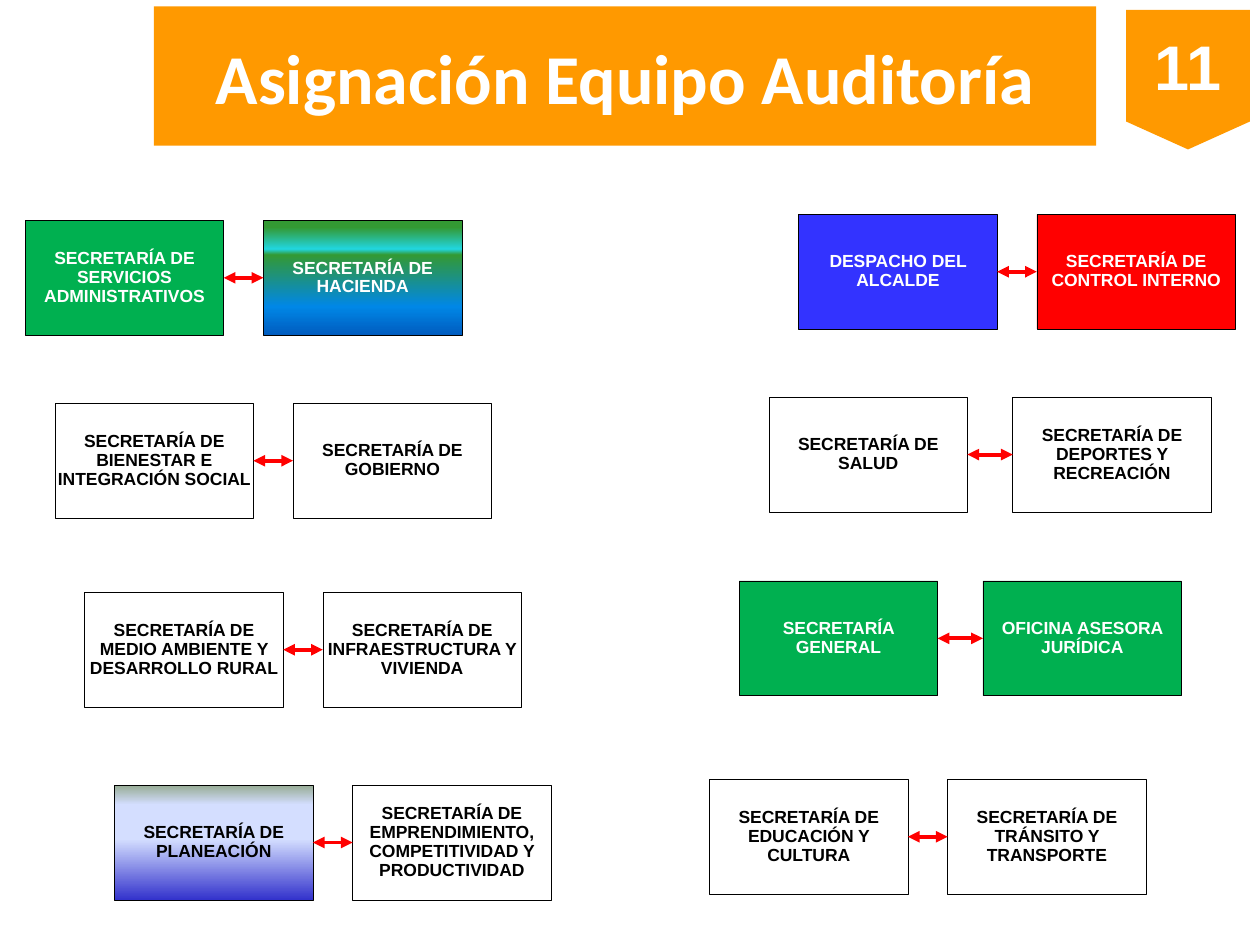
"""Build the audit team assignment slide with its paired departments."""
import pptx
import pptx.dml.color
import pptx.enum.dml
import pptx.enum.shapes
import pptx.enum.text
import pptx.oxml
import pptx.oxml.ns
import pptx.util

Pt = pptx.util.Pt
RGBColor = pptx.dml.color.RGBColor
SHAPES = pptx.enum.shapes.MSO_SHAPE
qn = pptx.oxml.ns.qn

WHITE = RGBColor(0xFF, 0xFF, 0xFF)
BLACK = RGBColor(0x00, 0x00, 0x00)
ORANGE = RGBColor(0xFF, 0x99, 0x00)
GREEN = RGBColor(0x00, 0xB0, 0x50)
BLUE = RGBColor(0x33, 0x33, 0xFF)
RED = RGBColor(0xFF, 0x00, 0x00)
FOREST = RGBColor(0x33, 0x99, 0x33)
INDIGO = RGBColor(0x33, 0x33, 0xCC)
PALE_BLUE = RGBColor(0xD4, 0xDE, 0xFF)
SAGE = RGBColor(0x96, 0xAB, 0x94)
CYAN = RGBColor(0x21, 0xD6, 0xE0)
AZURE = RGBColor(0x00, 0x87, 0xE6)
COBALT = RGBColor(0x00, 0x5C, 0xBF)

PLANNING = (90, [(0, INDIGO), (53, PALE_BLUE), (83, PALE_BLUE), (100, SAGE)])
TREASURY = (270, [(6, FOREST), (25, CYAN), (30, FOREST), (75, AZURE), (100, COBALT)])

BOX_WIDTH, BOX_HEIGHT = 113.4, 65.5
LEFT_START, RIGHT_START, STEP = 14.4, 456.4, 17

LEFT_PAIRS = [
    (126, 136.1, ("SECRETARÍA DE SERVICIOS ADMINISTRATIVOS", GREEN, WHITE),
     ("SECRETARÍA DE HACIENDA", TREASURY, WHITE)),
    (230.5, 136.1, ("SECRETARÍA DE BIENESTAR E INTEGRACIÓN SOCIAL", None, BLACK),
     ("SECRETARÍA DE GOBIERNO", None, BLACK)),
    (338.5, 136.1, ("SECRETARÍA DE MEDIO AMBIENTE Y DESARROLLO RURAL", None, BLACK),
     ("SECRETARÍA DE INFRAESTRUCTURA Y VIVIENDA", None, BLACK)),
    (448.7, 136.1, ("SECRETARÍA DE PLANEACIÓN", PLANNING, BLACK),
     ("SECRETARÍA DE EMPRENDIMIENTO, COMPETITIVIDAD Y PRODUCTIVIDAD", None, BLACK)),
]
RIGHT_PAIRS = [
    (122.5, 136.1, ("DESPACHO DEL ALCALDE", BLUE, WHITE),
     ("SECRETARÍA DE CONTROL INTERNO", RED, WHITE)),
    (227, 139.3, ("SECRETARÍA DE SALUD", None, BLACK),
     ("SECRETARÍA DE DEPORTES Y RECREACIÓN", None, BLACK)),
    (332, 139.3, ("SECRETARÍA GENERAL", GREEN, WHITE),
     ("OFICINA ASESORA JURÍDICA", GREEN, WHITE)),
    (445.4, 136.1, ("SECRETARÍA DE EDUCACIÓN Y CULTURA", None, BLACK),
     ("SECRETARÍA DE TRÁNSITO Y TRANSPORTE", None, BLACK)),
]


def add_label(kind, bounds, fill, text, font, size, color):
    shape = page.shapes.add_shape(kind, *[Pt(value) for value in bounds])
    shape.shadow.inherit = False
    shape.line.fill.background()
    if fill is None:
        shape.fill.background()
    elif isinstance(fill, RGBColor):
        shape.fill.solid()
        shape.fill.fore_color.rgb = fill
    else:
        angle, stops = fill
        shape.fill.gradient()
        shape.fill.gradient_angle = angle
        stop_list = shape._element.spPr.find(qn("a:gradFill")).find(qn("a:gsLst"))
        for old_stop in list(stop_list):
            stop_list.remove(old_stop)
        for position, stop_color in stops:
            stop_list.append(pptx.oxml.parse_xml(
                f'<a:gs {pptx.oxml.ns.nsdecls("a")} pos="{position * 1000}">'
                f'<a:srgbClr val="{stop_color}"/></a:gs>'))
    frame = shape.text_frame
    frame.word_wrap = True
    frame.vertical_anchor = pptx.enum.text.MSO_ANCHOR.MIDDLE
    para = frame.paragraphs[0]
    para.alignment = pptx.enum.text.PP_ALIGN.CENTER
    span = para.add_run()
    span.text = text
    span.font.name = font
    span.font.size = Pt(size)
    span.font.bold = True
    span.font.color.rgb = color
    return shape


def add_department(left, top, text, fill, color):
    box = add_label(SHAPES.RECTANGLE, (left, top, BOX_WIDTH, BOX_HEIGHT),
                    fill, text, "Arial", 10, color)
    box.line.color.rgb = BLACK
    box.line.width = Pt(0.25)
    frame = box.text_frame
    frame.margin_left = frame.margin_right = frame.margin_top = frame.margin_bottom = 0
    frame.paragraphs[0].line_spacing = 0.9
    frame.paragraphs[0].space_after = Pt(3.5)
    return box


deck = pptx.Presentation()
deck.slide_width, deck.slide_height = Pt(720), Pt(540)
page = deck.slides.add_slide(deck.slide_layouts[6])

badge = add_label(SHAPES.FLOWCHART_OFFPAGE_CONNECTOR, (643.5, 5.7, 70.8, 79.7),
                  ORANGE, "11", "Arial", 36, WHITE)
badge.text_frame.word_wrap = False
add_label(SHAPES.RECTANGLE, (88, 3.6, 538.4, 79.7),
          ORANGE, "Asignación Equipo Auditoría", "Calibri", 40, WHITE)

for start, step, pairs in [(LEFT_START, STEP, LEFT_PAIRS), (RIGHT_START, -STEP, RIGHT_PAIRS)]:
    for row, (top, pitch, first, second) in enumerate(pairs):
        left = start + row * step
        first_box = add_department(left, top, *first)
        second_box = add_department(left + pitch, top, *second)
        arrow = page.shapes.add_connector(pptx.enum.shapes.MSO_CONNECTOR.ELBOW, 0, 0, 0, 0)
        arrow.begin_connect(first_box, 3)
        arrow.end_connect(second_box, 1)
        arrow.line.color.rgb = RED
        arrow.line.width = Pt(2.25)
        for end in ("headEnd", "tailEnd"):
            arrow.line._get_or_add_ln().append(pptx.oxml.parse_xml(
                f'<a:{end} {pptx.oxml.ns.nsdecls("a")} type="triangle"/>'))
        arrow._element.spPr.append(pptx.oxml.parse_xml(
            f'<a:effectLst {pptx.oxml.ns.nsdecls("a")}/>'))

deck.save("out.pptx")
